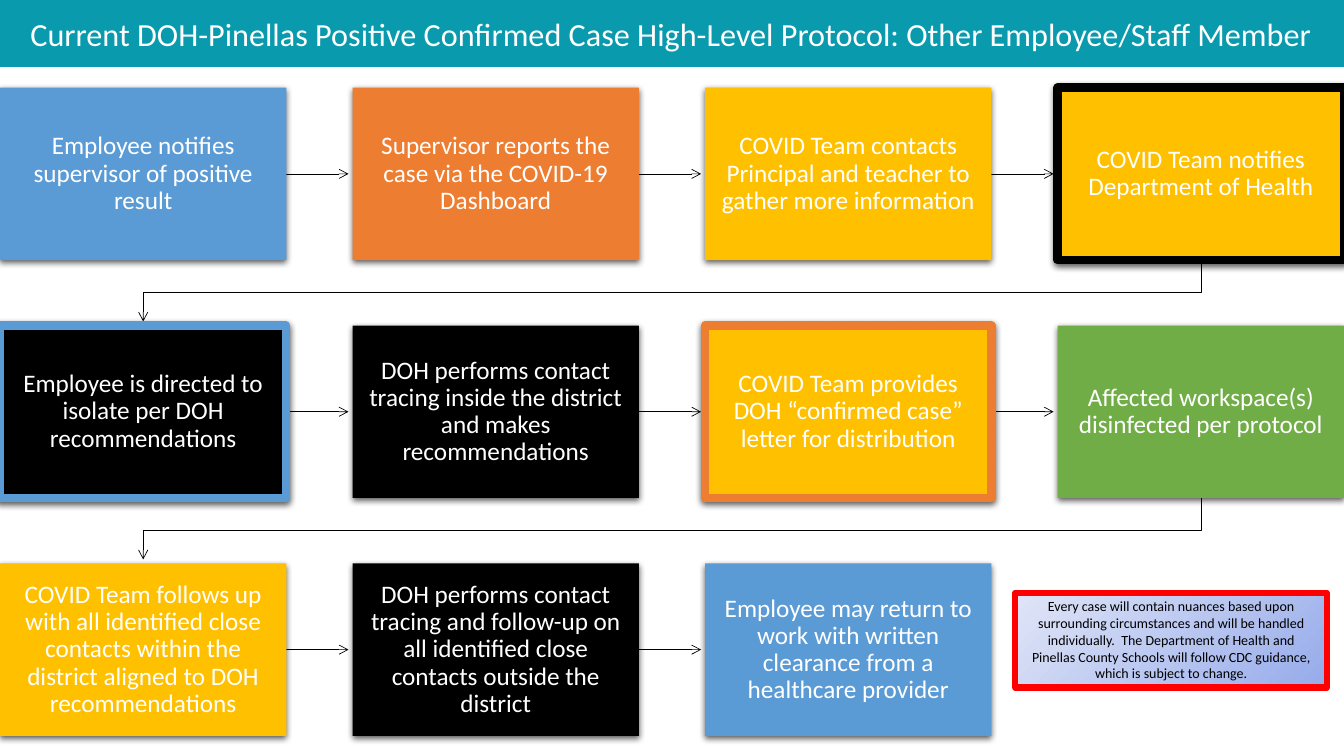
from dataclasses import dataclass

from lxml.etree import SubElement
from pptx import Presentation
from pptx.dml.color import RGBColor
from pptx.enum.shapes import MSO_CONNECTOR, MSO_SHAPE
from pptx.enum.text import MSO_ANCHOR, PP_ALIGN
from pptx.oxml.ns import qn
from pptx.util import Inches, Pt


@dataclass(frozen=True)
class Theme:
    """Colours, font and type sizes of the slide."""
    font: str = "Calibri"
    title: int = 23
    body: int = 18
    note: int = 10
    teal: str = "0A9AAE"
    blue: str = "5B9BD5"
    orange: str = "ED7D31"
    gold: str = "FFC000"
    green: str = "70AD47"
    red: str = "FF0000"
    black: str = "000000"
    white: str = "FFFFFF"
    note_dark: str = "96ABEA"
    note_light: str = "E0E5F7"


T = Theme()
WIDTH, HEIGHT = Inches(13.33), Inches(7.5)
COLS, ROWS = 4, 3
STEP_W, STEP_H = Inches(2.84), Inches(1.71)
ROW_PITCH = Inches(2.36)
ARROW_GAP = Inches(0.04)

STEPS = [
    ("Employee notifies supervisor of positive result", T.blue, None),
    ("Supervisor reports the case via the COVID-19 Dashboard", T.orange, None),
    ("COVID Team contacts Principal and teacher to gather more information", T.gold, None),
    ("COVID Team notifies Department of Health", T.gold, T.black),
    ("Employee is directed to isolate per DOH recommendations", T.black, T.blue),
    ("DOH performs contact tracing inside the district and makes recommendations", T.black, None),
    ("COVID Team provides DOH “confirmed case” letter for distribution", T.gold, T.orange),
    ("Affected workspace(s) disinfected per protocol", T.green, None),
    ("COVID Team follows up with all identified close contacts within the district "
     "aligned to DOH recommendations", T.gold, None),
    ("DOH performs contact tracing and follow-up on all identified close contacts "
     "outside the district", T.black, None),
    ("Employee may return to work with written clearance from a healthcare provider",
     T.blue, None),
]
NOTE = ("Every case will contain nuances based upon surrounding circumstances and will be "
        "handled individually.  The Department of Health and Pinellas County Schools will "
        "follow CDC guidance, which is subject to change.")


def rgb(value):
    """Turn a hex string into a colour."""
    return RGBColor.from_string(value)


def write(sp, text, size, color, anchor):
    """Set one centred paragraph in a shape."""
    tf = sp.text_frame
    tf.word_wrap = True
    tf.vertical_anchor = anchor
    p = tf.paragraphs[0]
    p.text = text
    p.alignment = PP_ALIGN.CENTER
    p.font.name, p.font.size = T.font, Pt(size)
    p.font.color.rgb = rgb(color)
    return tf


def add_shadow(sp):
    """Give a shape a soft shadow below it."""
    sp.shadow.inherit = False
    effects = sp._element.spPr.find(qn("a:effectLst"))
    shadow = SubElement(effects, qn("a:outerShdw"), blurRad=str(Pt(4.5)),
                        dist=str(Pt(1.5)), dir="5400000", algn="ctr", rotWithShape="0")
    SubElement(SubElement(shadow, qn("a:srgbClr"), val=T.black), qn("a:alpha"), val="63000")


def style_arrow(sp):
    """Draw a thin black line with an open arrowhead at its end."""
    sp.line.color.rgb = rgb(T.black)
    sp.line.width = Pt(0.5)
    SubElement(sp.line._get_or_add_ln(), qn("a:tailEnd"), type="arrow")
    if sp._element.spPr.find(qn("a:effectLst")) is None:
        SubElement(sp._element.spPr, qn("a:effectLst"))


def add_title(s, x, y, w, h):
    """Place the title as a filled band."""
    sp = s.shapes.title
    sp.left, sp.top, sp.width, sp.height = x, y, w, h
    sp.fill.solid()
    sp.fill.fore_color.rgb = sp.line.color.rgb = rgb(T.teal)
    sp.line.width = Pt(1)
    write(sp, "Current DOH-Pinellas Positive Confirmed Case High-Level Protocol: "
          "Other Employee/Staff Member", T.title, T.white, MSO_ANCHOR.MIDDLE)


def add_note(s, x, y, w, h):
    """Place the red-framed note."""
    sp = s.shapes.add_shape(MSO_SHAPE.RECTANGLE, x, y, w, h)
    sp.shadow.inherit = False
    sp.fill.gradient()
    sp.fill.gradient_angle = 135
    for stop, color in zip(sp.fill.gradient_stops, (T.note_dark, T.note_light)):
        stop.color.rgb = rgb(color)
    sp.line.color.rgb = rgb(T.red)
    sp.line.width = Pt(4.5)
    write(sp, NOTE, T.note, T.black, MSO_ANCHOR.TOP)


def add_step(s, x, y, text, fill, border):
    """Place one step of the protocol."""
    sp = s.shapes.add_shape(MSO_SHAPE.RECTANGLE, x, y, STEP_W, STEP_H)
    sp.fill.solid()
    sp.fill.fore_color.rgb = rgb(fill)
    if border:
        sp.line.color.rgb = rgb(border)
        sp.line.width = Pt(6)
    else:
        sp.line.fill.background()
    add_shadow(sp)
    tf = write(sp, text, T.body, T.white, MSO_ANCHOR.MIDDLE)
    tf.margin_left = tf.margin_right = tf.margin_top = tf.margin_bottom = Inches(0.14)
    tf.paragraphs[0].line_spacing = 0.9
    return sp


def add_turn(s, x, y, target_x):
    """Lead from the end of one row to the start of the next."""
    gap = ROW_PITCH - STEP_H
    middle = y + gap // 2
    path = s.shapes.build_freeform(x, y)
    path.add_line_segments([(x, middle), (target_x, middle),
                            (target_x, y + gap - ARROW_GAP)], close=False)
    sp = path.convert_to_shape()
    sp.fill.background()
    sp.shadow.inherit = False
    style_arrow(sp)


def add_flow(s, x, y, w):
    """Lay the steps out row by row with arrows between them."""
    pitch = (w - STEP_W) // (COLS - 1)
    for i, (text, fill, border) in enumerate(STEPS):
        row, col = divmod(i, COLS)
        left, top = x + col * pitch, y + row * ROW_PITCH
        arrow = None
        if col == COLS - 1:
            add_turn(s, left + STEP_W // 2, top + STEP_H, x + STEP_W // 2)
        elif i < len(STEPS) - 1:
            mid = top + STEP_H // 2
            arrow = s.shapes.add_connector(MSO_CONNECTOR.STRAIGHT, left + STEP_W, mid,
                                           left + pitch - ARROW_GAP, mid)
            style_arrow(arrow)
        step = add_step(s, left, top, text, fill, border)
        if arrow is not None:
            arrow.begin_connect(step, 3)


def main():
    """Build and save the slide."""
    prs = Presentation()
    prs.slide_width, prs.slide_height = WIDTH, HEIGHT
    s = prs.slides.add_slide(prs.slide_layouts[5])
    add_title(s, 0, 0, WIDTH, Inches(0.66))
    add_note(s, Inches(10.07), Inches(5.88), Inches(3.09), Inches(0.94))
    add_flow(s, 0, Inches(0.87), WIDTH)
    prs.save("out.pptx")


if __name__ == "__main__":
    main()
